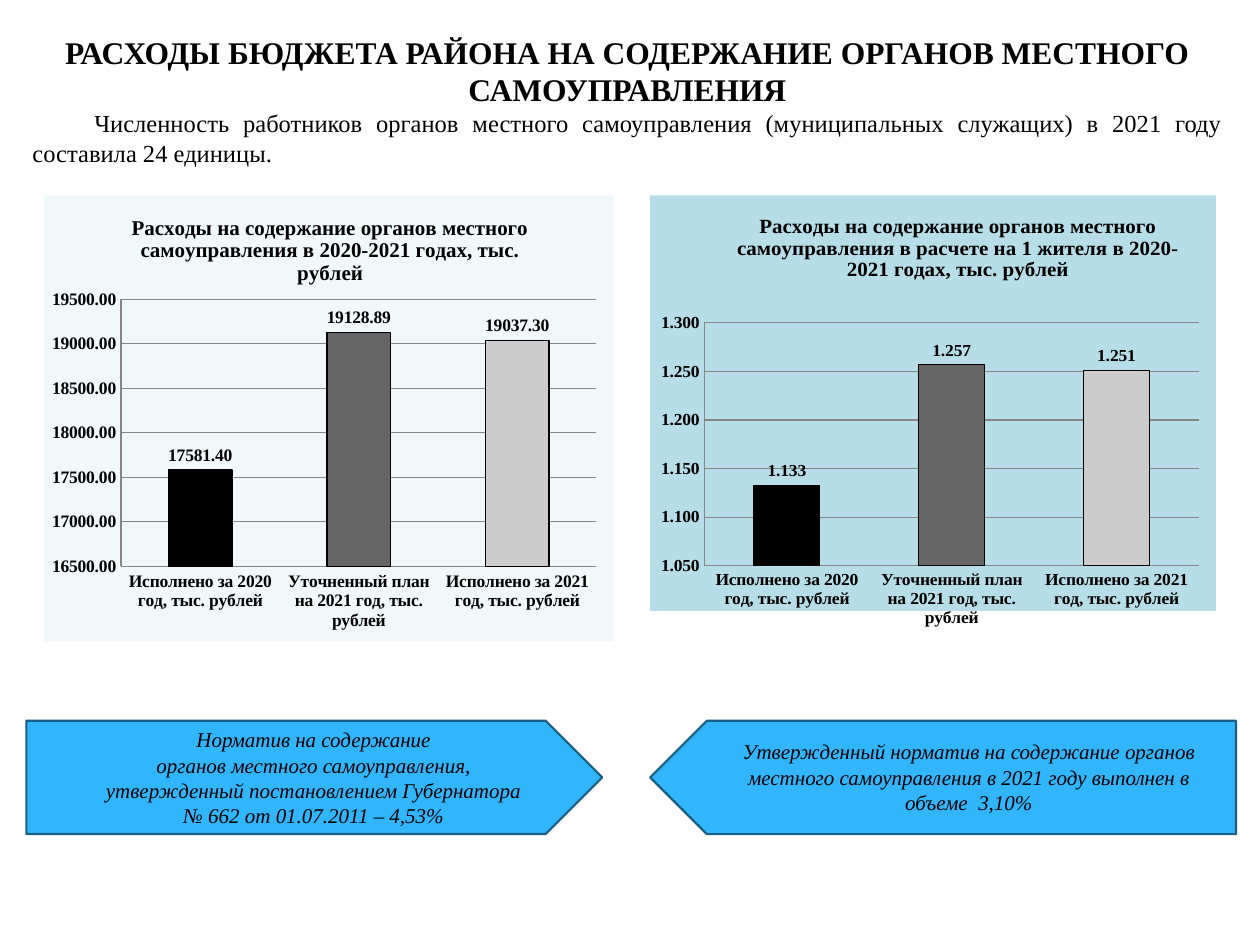
"""Build the slide on district spending for local self-government bodies."""
import pptx
import pptx.chart.data
import pptx.dml.color
import pptx.enum.chart
import pptx.enum.shapes
import pptx.enum.text
import pptx.oxml
import pptx.util
from pptx.util import Inches, Pt

FONT = "Times New Roman"
COLORS = {"text": "000000", "arrow": "31B6FD", "arrow_edge": "1A5F84", "grid": "868686",
          "pale": "F0F8F9", "blue": "B7DEE8"}
BAR_COLORS = ["000000", "666666", "CCCCCC"]
ALIGN = pptx.enum.text.PP_ALIGN
ANCHOR = pptx.enum.text.MSO_ANCHOR

HEADING = "РАСХОДЫ БЮДЖЕТА РАЙОНА НА СОДЕРЖАНИЕ ОРГАНОВ МЕСТНОГО САМОУПРАВЛЕНИЯ"
STAFF = ("Численность работников органов местного самоуправления (муниципальных служащих) "
         "в 2021 году составила 24 единицы.")
PERIODS = ["Исполнено за 2020 год, тыс. рублей", "Уточненный план на 2021 год, тыс. рублей",
           "Исполнено за 2021 год, тыс. рублей"]
CHARTS = [
    {"title": "Расходы на содержание органов местного самоуправления в 2020-2021 годах, тыс. рублей",
     "values": [17581.4, 19128.89, 19037.3], "format": "0.00", "scale": (16500, 19500, 500),
     "box": (0.35, 1.55, 4.52, 3.54), "plot": (0.135, 0.233, 0.835, 0.599), "fill": "pale"},
    {"title": "Расходы на содержание органов местного самоуправления в расчете на 1 жителя "
              "в 2020-2021 годах, тыс. рублей",
     "values": [1.133, 1.257, 1.251], "format": "0.000", "scale": (1.05, 1.3, 0.05),
     "box": (5.16, 1.55, 4.49, 3.43), "plot": (0.096, 0.307, 0.874, 0.585), "fill": "blue"},
]
NORMS = [
    {"arrow": (0.21, 5.72, 4.57, 0.9), "rotation": 0, "box": (0.21, 5.72, 4.56, 0.91),
     "anchor": ANCHOR.TOP,
     "lines": ["Норматив на содержание", "органов местного самоуправления,",
               "утвержденный постановлением Губернатора", "№ 662 от 01.07.2011 – 4,53%"]},
    {"arrow": (5.16, 5.72, 4.65, 0.9), "rotation": 180, "box": (5.79, 5.81, 3.8, 0.71),
     "anchor": ANCHOR.MIDDLE,
     "lines": ["Утвержденный норматив на содержание органов местного самоуправления "
               "в 2021 году выполнен в объеме  3,10%"]},
]


def rgb(name):
    return pptx.dml.color.RGBColor.from_string(COLORS.get(name, name))


def inches(box):
    return [Inches(length) for length in box]


def style(font, size, bold=False, italic=False):
    font.name, font.size, font.bold, font.italic = FONT, Pt(size), bold, italic
    font.color.rgb = rgb("text")


def paint(format_, fill, edge, width):
    format_.fill.solid()
    format_.fill.fore_color.rgb = rgb(fill)
    format_.line.color.rgb = rgb(edge)
    format_.line.width = Pt(width)


def add_text(slide, box, lines, anchor=ANCHOR.TOP):
    frame = slide.shapes.add_textbox(*inches(box)).text_frame
    frame.word_wrap = True
    frame.vertical_anchor = anchor
    frame.text = "\n".join(lines)
    for paragraph in frame.paragraphs:
        paragraph.alignment = ALIGN.CENTER
    return frame.paragraphs


def manual_layout(bounds, inner=False):
    target = '<c:layoutTarget val="inner"/>' if inner else ""
    modes = "".join(f'<c:{side}Mode val="edge"/>' for side in "xy")
    sizes = "".join(f'<c:{side} val="{value}"/>' for side, value in zip("xywh", bounds))
    return pptx.oxml.parse_xml(
        '<c:layout xmlns:c="http://schemas.openxmlformats.org/drawingml/2006/chart">'
        f"<c:manualLayout>{target}{modes}{sizes}</c:manualLayout></c:layout>")


def replace_layout(parent, layout, position):
    for old in parent.xpath("c:layout"):
        parent.remove(old)
    parent.insert(position, layout)


def fill_area(parent, fill):
    area = pptx.oxml.parse_xml(
        '<c:spPr xmlns:c="http://schemas.openxmlformats.org/drawingml/2006/chart" '
        'xmlns:a="http://schemas.openxmlformats.org/drawingml/2006/main">'
        f'<a:solidFill><a:srgbClr val="{COLORS[fill]}"/></a:solidFill>'
        "<a:ln><a:noFill/></a:ln></c:spPr>")
    if parent.xpath("c:chart"):
        parent.xpath("c:chart")[0].addnext(area)
    else:
        parent.append(area)


def add_spending_chart(slide, spending):
    data = pptx.chart.data.CategoryChartData(number_format=spending["format"])
    data.categories = PERIODS
    data.add_series("Series 1", spending["values"])
    chart = slide.shapes.add_chart(pptx.enum.chart.XL_CHART_TYPE.COLUMN_CLUSTERED,
                                   *inches(spending["box"]), data).chart
    style(chart.font, 10)
    chart.has_legend = False
    chart.chart_title.text_frame.text = spending["title"]
    style(chart.chart_title.text_frame.paragraphs[0].runs[0].font, 12, bold=True)
    chart.chart_title.include_in_layout = False
    title = chart._chartSpace.xpath("c:chart/c:title")[0]
    replace_layout(title, manual_layout((0.147, 0.035)), 1)
    plot_area = chart._chartSpace.xpath("c:chart/c:plotArea")[0]
    replace_layout(plot_area, manual_layout(spending["plot"], inner=True), 0)
    for area in (chart._chartSpace, plot_area):
        fill_area(area, spending["fill"])

    for axis in (chart.category_axis, chart.value_axis):
        axis.major_tick_mark = axis.minor_tick_mark = pptx.enum.chart.XL_TICK_MARK.NONE
        axis.format.line.color.rgb = rgb("grid")
        style(axis.tick_labels.font, 10, bold=True)
    values = chart.value_axis
    values.minimum_scale, values.maximum_scale, values.major_unit = spending["scale"]
    values.major_gridlines.format.line.color.rgb = rgb("grid")
    values.tick_labels.number_format = spending["format"]
    values.tick_labels.number_format_is_linked = False

    plot = chart.plots[0]
    plot.gap_width = 150
    plot.vary_by_categories = False
    bars = plot.series[0]
    for index, color in enumerate(BAR_COLORS):
        paint(bars.points[index].format, color, "text", 0.75)
    labels = bars.data_labels
    labels.show_value = True
    labels.number_format = spending["format"]
    labels.number_format_is_linked = False
    labels.position = pptx.enum.chart.XL_LABEL_POSITION.OUTSIDE_END
    style(labels.font, 10, bold=True)


def add_norm(slide, norm):
    arrow = slide.shapes.add_shape(pptx.enum.shapes.MSO_SHAPE.PENTAGON, *inches(norm["arrow"]))
    arrow.rotation = norm["rotation"]
    arrow.shadow.inherit = False
    paint(arrow, "arrow", "arrow_edge", 1.25)
    for paragraph in add_text(slide, norm["box"], norm["lines"], norm["anchor"]):
        style(paragraph.runs[0].font, 12, italic=True)


def main():
    deck = pptx.Presentation()
    deck.slide_width, deck.slide_height = Inches(10), Inches(7.5)
    slide = deck.slides.add_slide(deck.slide_layouts[6])
    heading, staff = add_text(slide, (0.16, 0.21, 9.64, 1.18), [HEADING, STAFF])
    style(heading.runs[0].font, 18, bold=True)
    style(staff.runs[0].font, 14)
    staff.alignment = ALIGN.JUSTIFY
    staff._p.get_or_add_pPr().set("indent", str(Inches(0.49)))
    for norm in NORMS:
        add_norm(slide, norm)
    for spending in CHARTS:
        add_spending_chart(slide, spending)
    deck.save("out.pptx")


if __name__ == "__main__":
    main()
